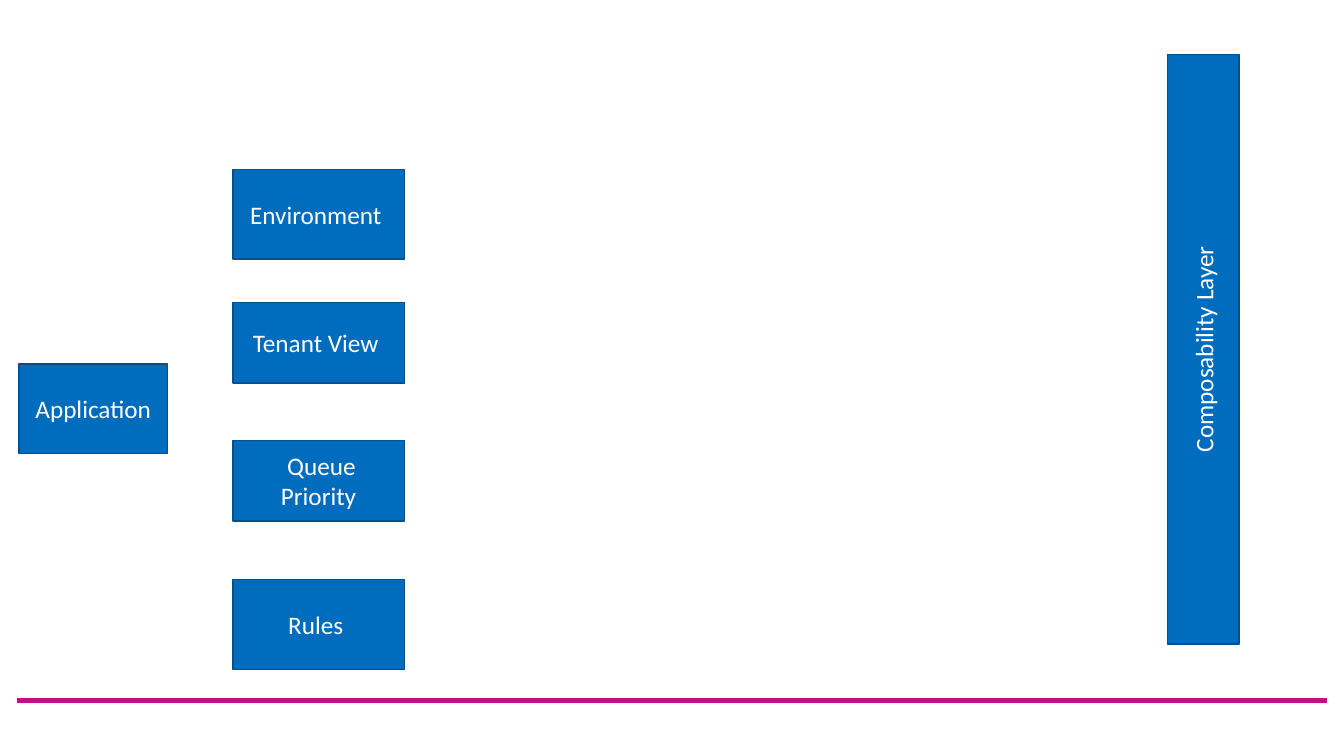
import pptx
import pptx.dml.color
import pptx.enum.shapes
import pptx.enum.text
import pptx.util
from lxml import etree

PX = 9144
FILL = "006CBD"
OUTLINE = "00508C"
RULE = "C20F83"
WHITE = "FFFFFF"


def px(length):
    return pptx.util.Emu(length * PX)


def color(value):
    return pptx.dml.color.RGBColor.from_string(value)


def add_block(slide, box, label, rotation=0):
    shape = slide.shapes.add_shape(
        pptx.enum.shapes.MSO_SHAPE.RECTANGLE, *map(px, box))
    shape.rotation = rotation
    shape.shadow.inherit = False
    shape.fill.solid()
    shape.fill.fore_color.rgb = color(FILL)
    shape.line.color.rgb = color(OUTLINE)
    shape.line.width = pptx.util.Pt(1)
    text_frame = shape.text_frame
    text_frame.word_wrap = True
    text_frame.vertical_anchor = pptx.enum.text.MSO_ANCHOR.MIDDLE
    text_frame.text = label
    paragraph = text_frame.paragraphs[0]
    paragraph.alignment = pptx.enum.text.PP_ALIGN.CENTER
    font = paragraph.runs[0].font
    font.name = "Calibri"
    font.size = pptx.util.Pt(18)
    font.color.rgb = color(WHITE)


def add_services(slide, box):
    left, top, width = box
    services = [
        ("Environment ", 0, 89),
        ("Tenant View ", 132, 80),
        (" Queue Priority", 269, 80),
        ("Rules ", 407, 89),
    ]
    for label, offset, height in services:
        add_block(slide, (left, top + offset, width, height), label)


def add_composability_layer(slide, box):
    left, top, width, height = box
    inset = (height - width) // 2
    add_block(slide, (left - inset, top + inset, height, width),
              "Composability Layer", 270)


def add_footer_rule(slide, left, right, top):
    rule = slide.shapes.add_connector(
        pptx.enum.shapes.MSO_CONNECTOR.STRAIGHT,
        px(left), px(top), px(right), px(top))
    rule.line.color.rgb = color(RULE)
    rule.line.width = pptx.util.Pt(3.5)
    etree.SubElement(rule.element.spPr, pptx.oxml.ns.qn("a:effectLst"))


def main():
    presentation = pptx.Presentation()
    presentation.slide_width = px(1333)
    presentation.slide_height = px(750)
    slide = presentation.slides.add_slide(presentation.slide_layouts[6])
    add_footer_rule(slide, 17, 1316, 695)
    add_composability_layer(slide, (1158, 54, 71, 585))
    add_block(slide, (19, 361, 147, 89), "Application")
    add_services(slide, (231, 168, 170))
    presentation.save("out.pptx")


if __name__ == "__main__":
    main()
